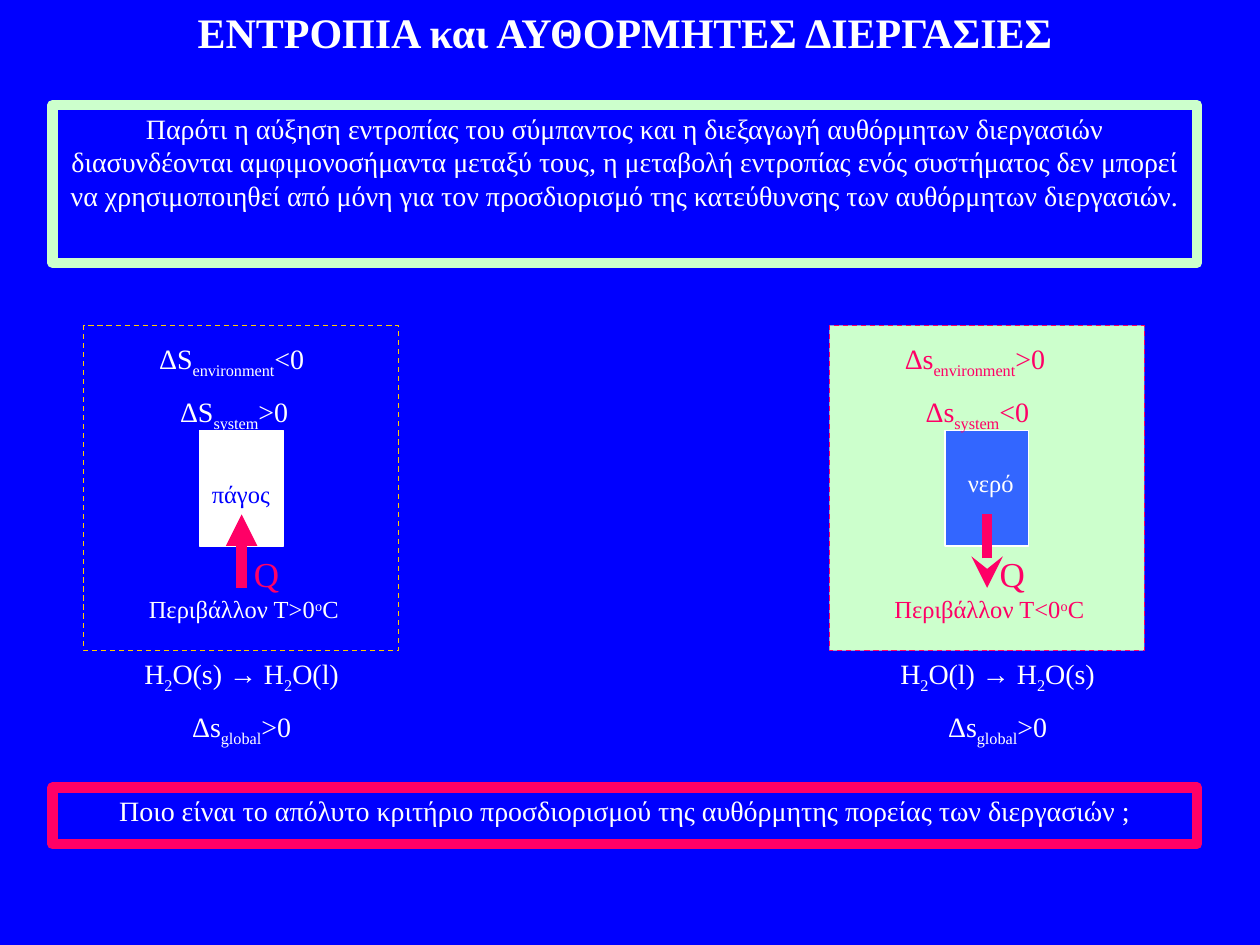
from lxml import etree
from pptx import Presentation
from pptx import util as u
from pptx.dml.color import RGBColor
from pptx.enum import dml, shapes, text
from pptx.oxml.ns import qn

FONT = "Times New Roman"
WHITE, BLUE, GREEN, PINK = "FFFFFF", "0000FF", "CCFFCC", "FF0066"
YELLOW, WATER = "FFCC00", "3366FF"
LEFT, CENTER = text.PP_ALIGN.LEFT, text.PP_ALIGN.CENTER


def rgb(value):
    return RGBColor.from_string(value)


def cm(*lengths):
    return [u.Cm(n) for n in lengths]


def write(sp, lines, size, color, align=LEFT, base=-25, bold=False):
    """Fill a shape; every second part between bars is raised or lowered."""
    tf = sp.text_frame
    tf.word_wrap = True
    tf.auto_size = text.MSO_AUTO_SIZE.SHAPE_TO_FIT_TEXT
    tf.vertical_anchor = text.MSO_ANCHOR.TOP
    for i, line in enumerate(lines):
        p = tf.paragraphs[0] if i == 0 else tf.add_paragraph()
        p.alignment = align
        before = etree.SubElement(p._p.get_or_add_pPr(), qn("a:spcBef"))
        etree.SubElement(before, qn("a:spcPct")).set("val", "50000")
        for j, part in enumerate(line.split("|")):
            r = p.add_run()
            r.text = part
            r.font.name, r.font.size, r.font.bold = FONT, u.Pt(size), bold
            r.font.color.rgb = rgb(color)
            if j % 2:
                r.font._element.set("baseline", str(base * 1000))


def title(s, wording):
    sp = s.shapes.title
    sp.left, sp.top, sp.width, sp.height = cm(2.54, 0, 20.12, 1.27)
    write(sp, [wording], 24, WHITE, CENTER, bold=True)


def label(s, box, lines, size, color, **style):
    write(s.shapes.add_textbox(*cm(*box)), lines, size, color, **style)


def rect(s, box, line, width=0.75, fill=None, dashed=False):
    sp = s.shapes.add_shape(shapes.MSO_SHAPE.RECTANGLE, *cm(*box))
    sp.shadow.inherit = False
    if fill:
        sp.fill.solid()
        sp.fill.fore_color.rgb = rgb(fill)
    else:
        sp.fill.background()
    sp.line.color.rgb = rgb(line)
    sp.line.width = u.Pt(width)
    if dashed:
        sp.line.dash_style = dml.MSO_LINE.DASH
    return sp


def framed_text(s, top, height, line, wording):
    sp = rect(s, (1.06, top, 23.07, height), line, 6)
    write(sp, [wording], 16, WHITE, CENTER)


def heat_arrow(s, x, end, kind):
    c = s.shapes.add_connector(shapes.MSO_CONNECTOR.STRAIGHT,
                               *cm(x, 11.85, x, 10.37))
    c.line.color.rgb = rgb(PINK)
    c.line.width = u.Pt(6)
    etree.SubElement(c.line._get_or_add_ln(), qn(end)).set("type", kind)
    etree.SubElement(c._element.spPr, qn("a:effectLst"))


def panel(s, x, color, border, fill, body, arrow, delta, signs, limit, phases):
    """One system in its surroundings, with the reaction underneath."""
    # Surroundings and system
    rect(s, (x, 6.56, 6.35, 6.56), border, fill=fill, dashed=True)
    body_fill, name, name_color, dx, y = body
    rect(s, (x + 2.33, 8.68, 1.69, 2.33), WHITE, fill=body_fill)
    label(s, (x + dx, y, 1.69, 0.85), [name], 14, name_color)
    # Heat flow
    heat_arrow(s, x + 3.18, *arrow)
    label(s, (x + 3.18, 11.01, 1.48, 1.1), ["Q"], 20, PINK)
    # Entropy changes and temperature
    env, system = signs
    label(s, (x + 1.27, 6.77, 4.02, 0.93),
          [f"{delta}|environment|{env}0"], 16, color)
    label(s, (x + 1.69, 7.83, 3.18, 0.93),
          [f"{delta}|system|{system}0"], 16, color)
    label(s, (x + 1.06, 11.85, 4.45, 0.85),
          [f"Περιβάλλον Τ{limit}0|ο|C"], 14, color, base=30)
    # Reaction
    first, last = phases
    reaction_x = 2.33 if x < 10 else 17.57
    label(s, (reaction_x, 13.12, 5.08, 1.96),
          [f"H|2|O({first}) → H|2|O({last})", "Δs|global|>0"],
          16, WHITE, align=CENTER)


def main():
    prs = Presentation()
    prs.slide_width, prs.slide_height = cm(25.4, 19.05)
    s = prs.slides.add_slide(prs.slide_layouts[5])
    s.background.fill.solid()
    s.background.fill.fore_color.rgb = rgb(BLUE)

    title(s, "ΕΝΤΡΟΠΙΑ και ΑΥΘΟΡΜΗΤΕΣ ΔΙΕΡΓΑΣΙΕΣ")
    framed_text(s, 2.12, 3.18, GREEN,
                "Παρότι η αύξηση εντροπίας του σύμπαντος και η διεξαγωγή "
                "αυθόρμητων διεργασιών διασυνδέονται αμφιμονοσήμαντα μεταξύ "
                "τους, η μεταβολή εντροπίας ενός συστήματος δεν μπορεί να "
                "χρησιμοποιηθεί από μόνη για τον προσδιορισμό της "
                "κατεύθυνσης των αυθόρμητων διεργασιών.")

    # Melting ice and freezing water
    panel(s, 1.69, WHITE, YELLOW, None, (WHITE, "πάγος", BLUE, 2.33, 9.53),
          ("a:tailEnd", "triangle"), "ΔS", "<>", ">", "sl")
    panel(s, 16.72, PINK, PINK, GREEN, (WATER, "νερό", WHITE, 2.54, 9.31),
          ("a:headEnd", "stealth"), "Δs", "><", "<", "ls")

    framed_text(s, 15.88, 1.14, PINK,
                "Ποιο είναι το απόλυτο κριτήριο προσδιορισμού της "
                "αυθόρμητης πορείας των διεργασιών ;")
    prs.save("out.pptx")


if __name__ == "__main__":
    main()
